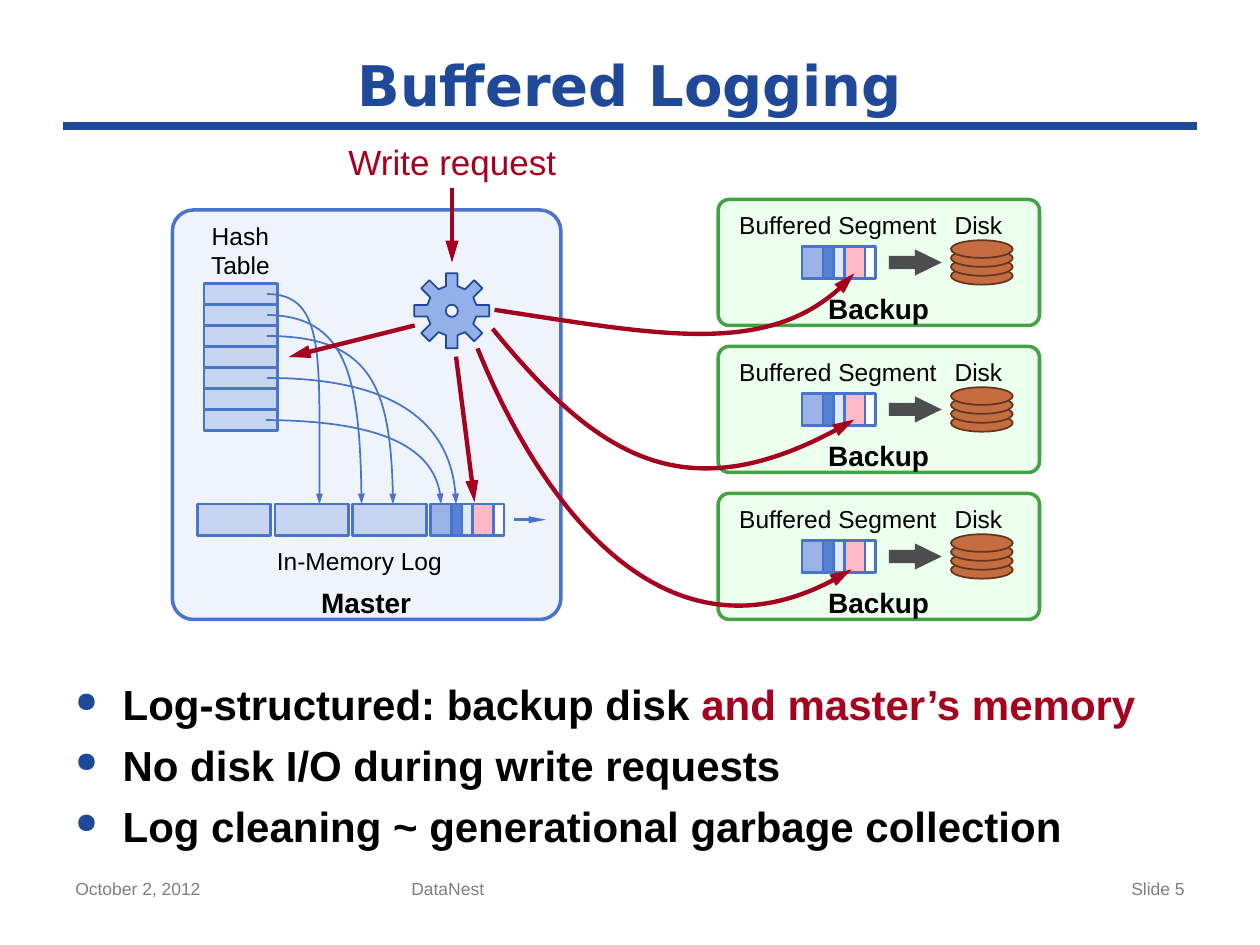
from math import cos, sin, pi
from lxml.etree import SubElement as Sub
from pptx import Presentation
from pptx.dml.color import RGBColor as RGB
from pptx.enum.shapes import MSO_CONNECTOR as Conn, MSO_SHAPE as Kind
from pptx.enum.text import MSO_ANCHOR as Anchor, PP_ALIGN as Align
from pptx.oxml.ns import qn
from pptx.util import Pt

THEME = {
    "navy": "1F4899", "blue": "4974CB", "red": "A5001E", "black": "000000",
    "gray": "7F7F7F", "pale": "EFF3FB", "light": "C7D5F1", "white": "FFFFFF",
    "gear": "94B0E8", "mint": "EDFFED", "green": "43A343",
    "rust": "C56D41", "brown": "64351E", "dark": "4D4D4D",
    "mid": "9AB3E6", "deep": "5781D5", "mist": "E1E8F7", "pink": "FFBAC7",
    "font": "Arial", "head font": "DejaVu Sans",
    "head": 32, "body": 24, "call": 20, "name": 16, "label": 14, "foot": 10,
}

# Text: words, box (left, top, width, height), format
FLUSH = {"inset": 0, "wrap": False, "align": Align.CENTER}
LABEL = {**FLUSH, "size": "label"}
NAME = {**FLUSH, "size": "name", "bold": True}
FOOT = {"size": "foot", "color": "gray"}
TEXTS = [
    ("October 2, 2012", (36, 498, 168, 31), FOOT),
    ("DataNest", (228, 498, 270, 31), FOOT),
    ("Slide 5", (516, 498, 168, 31), {**FOOT, "align": Align.RIGHT}),
    ("Buffered Logging", (36, 24, 648, 48),
     {"size": "head", "color": "navy", "bold": True, "font": "head font",
      "align": Align.CENTER, "anchor": Anchor.MIDDLE}),
    ("Write request", (191.5, 76.7, 134, 31.5),
     {"size": "call", "color": "red", "wrap": False, "align": Align.CENTER}),
    ("Master", (183.2, 334.6, 52, 19.4), NAME),
    ("In-Memory Log", (155.4, 312, 100, 17), LABEL),
    ("Hash\nTable", (116.4, 126, 42, 34), {**LABEL, "wrap": True}),
]
BULLETS = [
    [("Log-structured: backup disk ", "black"), ("and master’s memory", "red")],
    [("No disk I/O during write requests", "black")],
    [("Log cleaning ~ generational garbage collection", "black")],
]

# Log parts
CELL = (42, 18)
PARTS = [("mid", 12), ("deep", 6), ("mist", 6), ("pink", 12)]
LOG_X, LOG_Y, LOG_STEP = 112.8, 288, 44.4
HASH_X, HASH_Y, ROW, ROWS = 116.6, 162, 12, 7

# Backups: first corner, step down; labels are relative to the corner
BACK_X, BACK_Y, BACK_STEP = 410.4, 114, 84
BACK_TEXT = [
    ("Disk", (135, 6, 27.4, 17), LABEL),
    ("Backup", (62.5, 52.6, 58.3, 19.4), NAME),
    ("Buffered Segment", (12, 6, 113, 17), LABEL),
]

# Curves: start, two control points, end
LINKS = [
    [(152.6, 168), (186.5, 168), (182.2, 206.6), (182.6, 288)],
    [(152.6, 180), (197.3, 180.7), (206, 215.3), (206.6, 288)],
    [(152.6, 192), (212.4, 192), (223.9, 223.2), (224.6, 288)],
    [(152.6, 216), (220.3, 216), (259.9, 239.8), (260.6, 288)],
    [(151.9, 240), (214.6, 240.5), (251.3, 255.6), (252, 288)],
]
SENDS = [
    [(282.6, 177.1), (376.6, 191.5), (445.7, 205.2), (488.2, 156.2)],
    [(281.5, 187.9), (339.8, 259.2), (393.1, 295.9), (488.2, 239.8)],
    [(272.9, 199.1), (308.9, 288), (383.8, 390.2), (486.7, 325.4)],
]
ARROWS = [
    ((258.3, 107.7), (258.3, 150)),
    ((237, 186), (165, 204)),
    ((260.6, 203.8), (271.2, 287)),
]
GEAR = (258.2, 177.6)
TOOTH = [(-3.3, -14), (-3.3, -21.4), (3.3, -21.4), (3.3, -14)]


def rgb(name):
    return RGB.from_string(THEME[name])


def style(item, fill, edge, width):
    item.shadow.inherit = False
    if fill:
        item.fill.solid()
        item.fill.fore_color.rgb = rgb(fill)
    else:
        item.fill.background()
    if edge:
        item.line.color.rgb = rgb(edge)
        item.line.width = Pt(width)
    else:
        item.line.fill.background()


def shape(on, kind, box, fill, edge=None, width=1.5, adjust=()):
    item = on.add_shape(kind, *map(Pt, box))
    style(item, fill, edge, width)
    for i, value in enumerate(adjust):
        item.adjustments[i] = value


def tip(item, wide="med", long="lg"):
    Sub(item.line._get_or_add_ln(), qn("a:tailEnd"), type="triangle", w=wide, len=long)


def line(on, start, end, color="blue", width=1.5, head=None):
    item = on.add_connector(Conn.STRAIGHT, *map(Pt, (*start, *end)))
    item.line.color.rgb = rgb(color)
    item.line.width = Pt(width)
    if head:
        tip(item, *head)
    Sub(item._element.spPr, qn("a:effectLst"))


def outline(on, points, fill, edge, width, close):
    first, *rest = [(Pt(x), Pt(y)) for x, y in points]
    pen = on.build_freeform(*first)
    pen.add_line_segments(rest, close=close)
    item = pen.convert_to_shape()
    style(item, fill, edge, width)
    return item


def curve(on, knots, color, width, head, steps=40):
    """Draw a cubic Bezier arrow: points along it set the box, one curve the path."""
    points = []
    for i in range(steps + 1):
        t = i / steps
        s = 1 - t
        weights = (s**3, 3 * s * s * t, 3 * s * t * t, t**3)
        points.append([sum(w * v for w, v in zip(weights, axis)) for axis in zip(*knots)])
    item = outline(on, points, None, color, width, False)
    track = next(item._element.iter(qn("a:path")))
    for part in track.findall(qn("a:lnTo")):
        track.remove(part)
    bend = Sub(track, qn("a:cubicBezTo"))
    for x, y in knots[1:]:
        Sub(bend, qn("a:pt"), x=str(Pt(x) - item.left), y=str(Pt(y) - item.top))
    tip(item, *head)


def write(para, words, size, color="black", bold=False, font="font"):
    for i, part in enumerate(words.split("\n")):
        if i:
            para.add_line_break()
        run = para.add_run()
        run.text = part
        values = {"size": Pt(THEME[size]), "bold": bold, "name": THEME[font]}
        for key, value in values.items():
            setattr(run.font, key, value)
        run.font.color.rgb = rgb(color)


def frame(on, box, inset=None, wrap=True, anchor=Anchor.TOP):
    area = on.add_textbox(*map(Pt, box)).text_frame
    values = {"word_wrap": wrap, "vertical_anchor": anchor}
    if inset is not None:
        sides = ("left", "top", "right", "bottom")
        values.update({f"margin_{side}": Pt(inset) for side in sides})
    for key, value in values.items():
        setattr(area, key, value)
    return area


def label(on, words, box, form):
    form = dict(form)
    align = form.pop("align", Align.LEFT)
    hold = {key: form.pop(key) for key in ("inset", "wrap", "anchor") if key in form}
    para = frame(on, box, **hold).paragraphs[0]
    para.alignment = align
    write(para, words, **form)


def bullets(on, box):
    area = frame(on, box)
    for i, runs in enumerate(BULLETS):
        para = area.add_paragraph() if i else area.paragraphs[0]
        para.space_before = Pt(6)
        props = para._p.get_or_add_pPr()
        props.set("marL", str(Pt(27)))
        props.set("indent", str(-Pt(27)))
        Sub(Sub(props, qn("a:buClr")), qn("a:srgbClr"), val=THEME["navy"])
        Sub(props, qn("a:buSzPct"), val="67000")
        Sub(props, qn("a:buChar"), char="●")
        for words, color in runs:
            write(para, words, "body", color, True)


def segment(on, x, y):
    shape(on, Kind.RECTANGLE, (x, y, *CELL), "white", "blue")
    for fill, width in PARTS:
        shape(on, Kind.RECTANGLE, (x, y, width, CELL[1]), fill, "blue")
        x += width


def backup(on, x, y):
    shape(on, Kind.ROUNDED_RECTANGLE, (x, y, 183.6, 72), "mint", "green", 2, [0.087])
    left, top = x + 48, y + 27
    segment(on, left, top)
    line(on, (left, top), (left, top + CELL[1]))
    for i in reversed(range(4)):
        shape(on, Kind.OVAL, (x + 133, y + 23.3 + 5.1 * i, 35.3, 10.1), "rust", "brown", 1)
    for words, (dx, dy, *size), form in BACK_TEXT:
        label(on, words, (x + dx, y + dy, *size), form)
    shape(on, Kind.RIGHT_ARROW, (x + 97.5, y + 28.5, 30.2, 15), "dark", adjust=[0.5, 1.02])


def gear(on):
    x, y = GEAR
    points = []
    for i in range(8):
        c, s = cos(i * pi / 4), sin(i * pi / 4)
        points += [(x + c * u - s * v, y + s * u + c * v) for u, v in TOOTH]
    outline(on, points, "gear", "navy", 1, True)
    shape(on, Kind.OVAL, (x - 3.5, y - 3.5, 7, 7), "pale", "navy", 1)


def main():
    deck = Presentation()
    deck.slide_width, deck.slide_height = Pt(720), Pt(540)
    on = deck.slides.add_slide(deck.slide_layouts[6]).shapes
    line(on, (36, 72), (684, 72), "navy", 4.5)
    bullets(on, (36, 384, 648, 98.6))
    shape(on, Kind.ROUNDED_RECTANGLE, (98.5, 120, 222, 234), "pale", "blue", 2, [0.054])
    for i in range(3):
        backup(on.add_group_shape().shapes, BACK_X, BACK_Y + i * BACK_STEP)
    for words, box, form in TEXTS:
        label(on, words, box, form)

    shape(on, Kind.RECTANGLE, (HASH_X, HASH_Y, CELL[0], ROW * ROWS), "light", "blue")
    for i in range(1, ROWS):
        y = HASH_Y + i * ROW
        line(on, (HASH_X, y), (HASH_X + CELL[0], y))
    gear(on.add_group_shape().shapes)
    for knots in LINKS:
        curve(on, knots, "blue", 1, ("sm", "med"))
    for start, end in ARROWS:
        line(on, start, end, "red", 2.5, ("med", "lg"))
    for knots in SENDS:
        curve(on, knots, "red", 2.5, ("med", "lg"))

    log = on.add_group_shape().shapes
    for i in range(3):
        shape(log, Kind.RECTANGLE, (LOG_X + i * LOG_STEP, LOG_Y, *CELL), "light", "blue")
    segment(log, LOG_X + 3 * LOG_STEP, LOG_Y)
    line(on, (294, 297), (312, 297), head=("sm", "lg"))
    deck.save("out.pptx")


if __name__ == "__main__":
    main()
